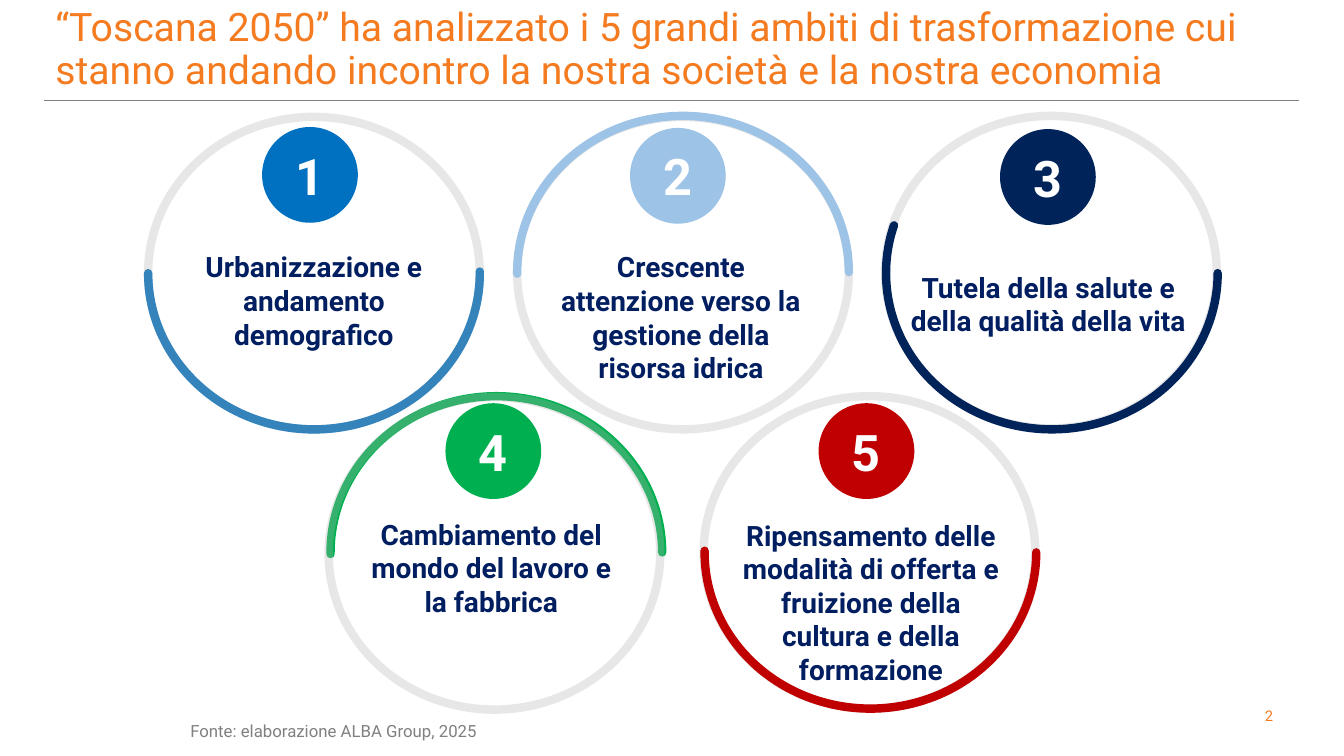
from dataclasses import dataclass

from pptx import Presentation
from pptx.dml.color import RGBColor
from pptx.enum.shapes import MSO_CONNECTOR, MSO_SHAPE as Shape
from pptx.enum.text import MSO_ANCHOR as Anchor, MSO_AUTO_SIZE as AutoSize, PP_ALIGN as Align
from pptx.oxml.ns import qn
from pptx.util import Pt
from lxml.etree import SubElement


@dataclass(frozen=True)
class Theme:
    font: str = "Roboto"
    orange: str = "F47B20"
    grey: str = "808080"
    ring: str = "B2B2B2"
    navy: str = "001E60"
    white: str = "FFFFFF"
    title_size: float = 28
    badge_size: float = 36
    label_size: float = 20
    note_size: float = 12
    page_size: float = 10.5
    stroke: float = 6


@dataclass(frozen=True)
class Box:
    left: float
    top: float
    width: float
    height: float

    def inner(self, left, top, width, height):
        return Box(self.left + left, self.top + top, width, height)

    def lengths(self):
        return [Pt(value) for value in (self.left, self.top, self.width, self.height)]


@dataclass(frozen=True)
class Topic:
    text: str
    color: str
    ring: tuple         # left and top on the page
    badge: tuple        # offset from the ring
    label: tuple        # offset from the ring, width, height
    arc: tuple = (0, 0)  # offset from the ring
    start: float = 107.662
    rotation: float = 0
    flipped: bool = False
    arc_behind: bool = False


THEME = Theme()
RING_WIDTH, RING_HEIGHT, BADGE = 236.9, 223.2, 68.4
TOPICS = [
    Topic("Urbanizzazione e andamento\ndemografico", "0070C0", (105.8, 83.5),
          (81.4, 7.2), (0, 91.4, 236.9, 79.9), rotation=180, arc_behind=True),
    Topic("Crescente attenzione verso la gestione della risorsa idrica", "9DC3E6",
          (369.4, 83.5), (80.6, 7.9), (14.4, 91.4, 205.2, 79.9), (0, -0.7)),
    Topic("Tutela della salute e della qualità della vita", "00235A", (632.2, 82.8),
          (82.1, 9.4), (7.9, 106.6, 217.4, 55.4), (0.7, 0.7), start=97.899, flipped=True),
    Topic("Cambiamento del mondo del lavoro e\nla fabbrica", "00B050", (234.7, 283.7),
          (83.5, 4.3), (5, 82.1, 222.5, 79.9), (1.4, -0.7), arc_behind=True),
    Topic("Ripensamento delle modalità di offerta e fruizione della cultura e della formazione",
          "C00000", (502.6, 283), (82.1, 5), (20.2, 83.5, 198.7, 128.2), (0.7, 0), flipped=True),
]


def rgb(color):
    return RGBColor.from_string(color)


def write(shape, text, *, size, color, bold=False, align=Align.LEFT,
          anchor=Anchor.TOP, spacing=None, after=None, margin=None):
    frame = shape.text_frame
    frame.word_wrap = True
    frame.auto_size = AutoSize.NONE
    frame.vertical_anchor = anchor
    if margin is not None:
        frame.margin_left = frame.margin_right = Pt(margin)
        frame.margin_top = frame.margin_bottom = Pt(margin)
    para = frame.paragraphs[0]
    para.alignment = align
    para.space_before = Pt(0)
    if spacing:
        para.line_spacing = spacing
    if after:
        para.space_after = Pt(after)
    for index, line in enumerate(text.split("\n")):
        if index:
            para.add_line_break()
        span = para.add_run()
        span.text = line
        span.font.name = THEME.font
        span.font.size = Pt(size)
        span.font.bold = bold
        span.font.color.rgb = rgb(color)


def add_text(page, box, text, **style):
    write(page.shapes.add_textbox(*box.lengths()), text, **style)


def add_outline(page, kind, box, color):
    shape = page.shapes.add_shape(kind, *box.lengths())
    shape.shadow.inherit = False
    shape.fill.background()
    shape.line.color.rgb = rgb(color)
    shape.line.width = Pt(THEME.stroke)
    return shape


def add_ring(page, box):
    ring = add_outline(page, Shape.OVAL, box, THEME.ring)
    color = ring.line.color._xFill.find(qn("a:srgbClr"))
    SubElement(color, qn("a:alpha")).set("val", "30000")


def add_arc(page, box, topic):
    arc = add_outline(page, Shape.ARC, box, topic.color)
    arc.adjustments[0] = topic.start
    arc.adjustments[1] = 0
    arc.rotation = topic.rotation
    properties = arc._element.spPr
    properties.find(qn("a:ln")).set("cap", "rnd")
    if topic.flipped:
        properties.find(qn("a:xfrm")).set("flipV", "1")


def add_topic(page, box, number, topic):
    # Ring and coloured arc
    arc_box = box.inner(*topic.arc, box.width, box.height)
    if topic.arc_behind:
        add_arc(page, arc_box, topic)
    add_ring(page, box)
    if not topic.arc_behind:
        add_arc(page, arc_box, topic)
    # Numbered badge
    badge = page.shapes.add_shape(Shape.OVAL, *box.inner(*topic.badge, BADGE, BADGE).lengths())
    badge.shadow.inherit = False
    badge.fill.solid()
    badge.fill.fore_color.rgb = rgb(topic.color)
    badge.line.fill.background()
    write(badge, str(number), size=THEME.badge_size, color=THEME.white, bold=True,
          align=Align.CENTER, anchor=Anchor.MIDDLE, margin=0)
    # Label
    add_text(page, box.inner(*topic.label), topic.text, size=THEME.label_size,
             color=THEME.navy, bold=True, align=Align.CENTER, after=6)


def add_header(page, box):
    title = page.shapes.title
    title.left, title.top, title.width, title.height = box.lengths()
    write(title, "“Toscana 2050” ha analizzato i 5 grandi ambiti di trasformazione cui "
          "stanno andando incontro la nostra società e la nostra economia",
          size=THEME.title_size, color=THEME.orange, anchor=Anchor.MIDDLE, spacing=0.9)
    # Rule under the title
    bottom = box.top + box.height
    rule = page.shapes.add_connector(MSO_CONNECTOR.STRAIGHT, Pt(box.left - 0.7), Pt(bottom),
                                     Pt(box.left + box.width - 7.9), Pt(bottom))
    rule.line.color.rgb = rgb(THEME.grey)
    rule.line.width = Pt(0.5)
    SubElement(rule._element.spPr, qn("a:effectLst"))


def add_footer(page, box):
    add_text(page, box.inner(0, 11.5, 702.7, 20.2), "Fonte: elaborazione ALBA Group, 2025",
             size=THEME.note_size, color=THEME.grey, spacing=0.9)
    add_text(page, box.inner(761, 0, 33.1, 20.9), "2",
             size=THEME.page_size, color=THEME.orange, align=Align.CENTER)


def main():
    deck = Presentation()
    deck.slide_width, deck.slide_height = Pt(960), Pt(540)
    page = deck.slides.add_slide(deck.slide_layouts[5])
    add_header(page, Box(32.4, 0, 903.6, 72))
    for number, topic in enumerate(TOPICS, 1):
        add_topic(page, Box(*topic.ring, RING_WIDTH, RING_HEIGHT), number, topic)
    add_footer(page, Box(128.9, 501.1, 794.1, 31.7))
    deck.save("out.pptx")


if __name__ == "__main__":
    main()
